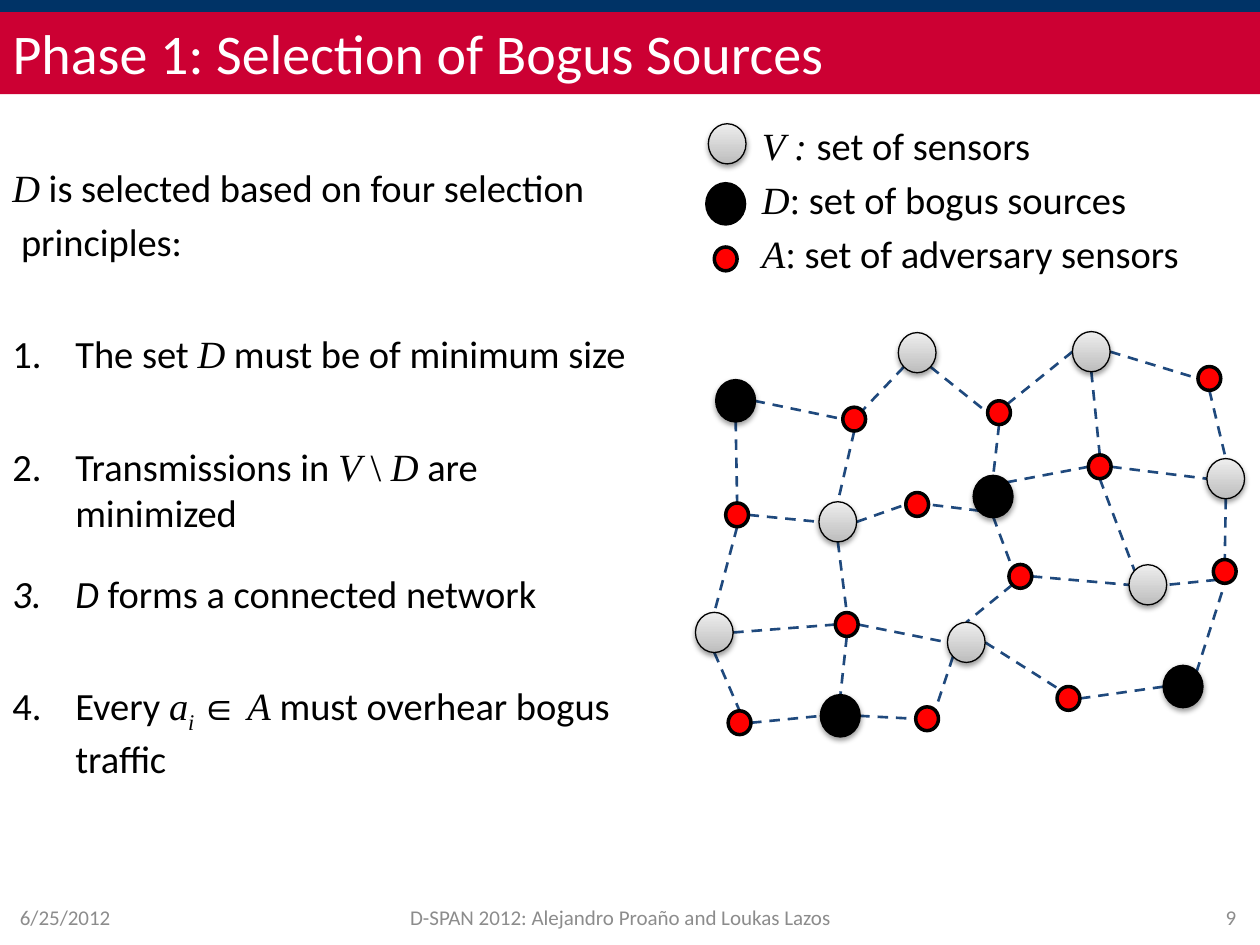
from math import cos, radians, sin

from lxml.etree import SubElement
from pptx import Presentation
from pptx.dml.color import RGBColor
from pptx.enum.dml import MSO_LINE
from pptx.enum.shapes import MSO_CONNECTOR, MSO_SHAPE
from pptx.enum.text import MSO_ANCHOR, PP_ALIGN
from pptx.oxml.ns import qn
from pptx.util import Cm, Pt

NAVY = RGBColor(0x00, 0x33, 0x66)
CRIMSON = RGBColor(0xCC, 0x00, 0x33)
WHITE = RGBColor(0xFF, 0xFF, 0xFF)
BLACK = RGBColor(0x00, 0x00, 0x00)
RED = RGBColor(0xFF, 0x00, 0x00)
GRAY = RGBColor(0x8C, 0x8C, 0x8C)
DARK_SILVER = RGBColor(0xBD, 0xBD, 0xBD)
LIGHT_SILVER = RGBColor(0xEE, 0xEE, 0xEE)
LINK_BLUE = RGBColor(0x1F, 0x49, 0x7D)

# Content: a run is (text, style)
TITLE = "Phase 1: Selection of Bogus Sources"
PLAIN = {"font": "Calibri"}
ITALIC = {"font": "Calibri", "italic": True}
MATH = {"font": "Times New Roman", "italic": True}
UPRIGHT = {"font": "Times New Roman"}
SUBSCRIPT = {"font": "Times New Roman", "italic": True, "baseline": -25000}

# Paragraphs: (space before in points, numbered, runs)
PRINCIPLES = [
    (0, False, [("D", MATH), (" is selected based on four selection", PLAIN)]),
    (4.4, False, [(" principles:", PLAIN)]),
    (38, True, [("The set ", PLAIN), ("D", MATH),
                (" must be of minimum size", PLAIN)]),
    (38, True, [("Transmissions in ", PLAIN), ("V ", MATH), ("\\ ", UPRIGHT),
                ("D", MATH), (" are minimized", PLAIN)]),
    (19.5, True, [("D", ITALIC), (" forms a connected network", PLAIN)]),
    (38, True, [("Every ", PLAIN), ("a", MATH), ("i ", SUBSCRIPT), ("∈ A ", MATH),
                ("must overhear bogus traffic", PLAIN)]),
]
LEGEND = [
    (0, False, [("V : ", MATH), ("set of sensors", PLAIN)]),
    (4.4, False, [("D", MATH), (":", UPRIGHT), (" set of bogus sources", PLAIN)]),
    (4.4, False, [("A", MATH), (":", UPRIGHT), (" set of adversary sensors", PLAIN)]),
]
LEGEND_NODES = [("V", 14.66, 2.9), ("D", 14.63, 4.11), ("A", 14.63, 5.22)]

# Footer: text, left, width, alignment
FOOTER = [
    ("6/25/2012", 0.15, 5.92, PP_ALIGN.LEFT),
    ("D-SPAN 2012: Alejandro Proaño and Loukas Lazos", 7.8, 9.42, PP_ALIGN.CENTER),
    ("9", 19.25, 5.92, PP_ALIGN.RIGHT),
]

# Network: node centres in cm; the first letter is the set
NODES = {
    "V1": (18.49, 7.11), "V2": (22, 7.09), "V3": (24.71, 9.65), "V4": (16.89, 10.52),
    "V5": (23.14, 11.79), "V6": (14.4, 12.75), "V7": (19.48, 12.95),
    "D1": (14.83, 8.08), "D2": (20.02, 10.01), "D3": (16.94, 14.43),
    "D4": (23.85, 13.84),
    "A1": (24.38, 7.63), "A2": (20.14, 8.32), "A3": (17.22, 8.45),
    "A4": (22.17, 9.41), "A5": (18.49, 10.17), "A6": (14.86, 10.38),
    "A7": (24.69, 11.52), "A8": (20.57, 11.62), "A9": (17.07, 12.59),
    "A10": (21.54, 14.08), "A11": (18.69, 14.49), "A12": (14.91, 14.57),
}
NODE_SIZES = {"V": (0.76, 0.81), "D": (0.76, 0.81), "A": (0.46, 0.48)}

# Links: node and compass side at each end
LINKS = [
    "A1 S V3 N", "V2 E A1 W", "A2 S D2 N", "A8 E V5 W", "A4 E V3 W", "V2 S A4 N",
    "A7 SW V5 E", "V3 S A7 N", "V7 SW A11 NE", "D3 E A11 W", "D2 NE A4 W",
    "A2 NE V2 W", "V1 SE A2 W", "A10 E D4 W", "V7 E A10 NW", "A3 S V4 N",
    "V4 E A5 W", "D2 SW A5 E", "A8 SW V7 N", "D2 S A8 NW", "A6 E V4 W",
    "A6 S V6 N", "D1 S A6 N", "V1 SW A3 NE", "D1 E A3 W", "A9 E V7 W",
    "A9 S D3 N", "V6 E A9 W", "V6 S A12 N", "V4 S A9 N", "A4 S V5 NW",
    "A12 E D3 W", "D4 NE A7 S",
]
ANGLES = {side: 45 * step for step, side in
          enumerate(["E", "SE", "S", "SW", "W", "NW", "N", "NE"])}


def add_run(paragraph, text, size, color, font="Calibri", italic=False, baseline=None):
    run = paragraph.add_run()
    run.text = text
    run.font.size = Pt(size)
    run.font.name = font
    run.font.italic = italic
    run.font.color.rgb = color
    if baseline:
        run.font._element.set("baseline", str(baseline))


def add_textbox(slide, left, top, width, height):
    frame = slide.shapes.add_textbox(Cm(left), Cm(top), Cm(width), Cm(height)).text_frame
    frame.word_wrap = True
    return frame


def add_paragraphs(frame, paragraphs):
    for index, (space, numbered, runs) in enumerate(paragraphs):
        paragraph = frame.add_paragraph() if index else frame.paragraphs[0]
        paragraph.space_before = Pt(space)
        for text, style in runs:
            add_run(paragraph, text, 22, BLACK, **style)
        if numbered:
            properties = paragraph._p.get_or_add_pPr()
            properties.set("marL", str(Cm(1.27)))
            properties.set("indent", str(-Cm(1.27)))
            SubElement(properties, qn("a:buAutoNum"), type="arabicPeriod")


def add_shadow(shape):
    effects = shape._element.spPr.find(qn("a:effectLst"))
    shadow = SubElement(effects, qn("a:outerShdw"), blurRad=str(Pt(3.1)),
                        dist=str(Pt(1.6)), dir="5400000", rotWithShape="0")
    color = SubElement(shadow, qn("a:srgbClr"), val="000000")
    SubElement(color, qn("a:alpha"), val="38000")


def add_node(slide, kind, x, y, shadowed):
    width, height = NODE_SIZES[kind]
    node = slide.shapes.add_shape(MSO_SHAPE.OVAL, Cm(x - width / 2), Cm(y - height / 2),
                                  Cm(width), Cm(height))
    node.shadow.inherit = False
    node.line.color.rgb = BLACK
    node.line.width = Pt(0.75 if kind == "V" else 2)
    if kind == "V":
        node.fill.gradient()
        node.fill.gradient_angle = 90
        for stop, color in zip(node.fill.gradient_stops, (DARK_SILVER, LIGHT_SILVER)):
            stop.color.rgb = color
    else:
        node.fill.solid()
        node.fill.fore_color.rgb = BLACK if kind == "D" else RED
    if shadowed:
        add_shadow(node)


def edge_point(name, side):
    x, y = NODES[name]
    width, height = NODE_SIZES[name[0]]
    angle = radians(ANGLES[side])
    return Cm(x + width / 2 * cos(angle)), Cm(y + height / 2 * sin(angle))


def add_link(slide, link):
    start, start_side, end, end_side = link.split()
    line = slide.shapes.add_connector(MSO_CONNECTOR.STRAIGHT,
                                      *edge_point(start, start_side),
                                      *edge_point(end, end_side))
    line.line.color.rgb = LINK_BLUE
    line.line.width = Pt(1.5)
    line.line.dash_style = MSO_LINE.DASH
    SubElement(line._element.spPr, qn("a:effectLst"))


def main():
    presentation = Presentation()
    presentation.slide_width, presentation.slide_height = Cm(25.4), Cm(19.05)
    slide = presentation.slides.add_slide(presentation.slide_layouts[5])

    # Title band
    stripe = slide.shapes.add_shape(MSO_SHAPE.RECTANGLE, 0, 0, Cm(25.4), Cm(0.2))
    stripe.shadow.inherit = False
    stripe.fill.solid()
    stripe.fill.fore_color.rgb = stripe.line.color.rgb = NAVY
    stripe.line.width = Pt(2)
    title = slide.shapes.title
    title.left, title.top, title.width, title.height = 0, Cm(0.2), Cm(25.4), Cm(1.7)
    title.fill.solid()
    title.fill.fore_color.rgb = CRIMSON
    title.text_frame.vertical_anchor = MSO_ANCHOR.MIDDLE
    title.text_frame.paragraphs[0].alignment = PP_ALIGN.LEFT
    add_run(title.text_frame.paragraphs[0], TITLE, 32, WHITE)

    # Selection principles and legend
    add_paragraphs(add_textbox(slide, 0, 3.18, 13.26, 14.17), PRINCIPLES)
    add_paragraphs(add_textbox(slide, 15.11, 2.34, 9.68, 3.45), LEGEND)
    for kind, x, y in LEGEND_NODES:
        add_node(slide, kind, x, y, shadowed=kind == "V")

    # Sensor network
    for link in LINKS:
        add_link(slide, link)
    for name, (x, y) in NODES.items():
        add_node(slide, name[0], x, y, shadowed=name[0] != "A")

    # Footer
    for text, left, width, alignment in FOOTER:
        frame = add_textbox(slide, left, 17.98, width, 1.02)
        frame.vertical_anchor = MSO_ANCHOR.MIDDLE
        frame.paragraphs[0].alignment = alignment
        add_run(frame.paragraphs[0], text, 12, GRAY)

    presentation.save("out.pptx")


if __name__ == "__main__":
    main()
